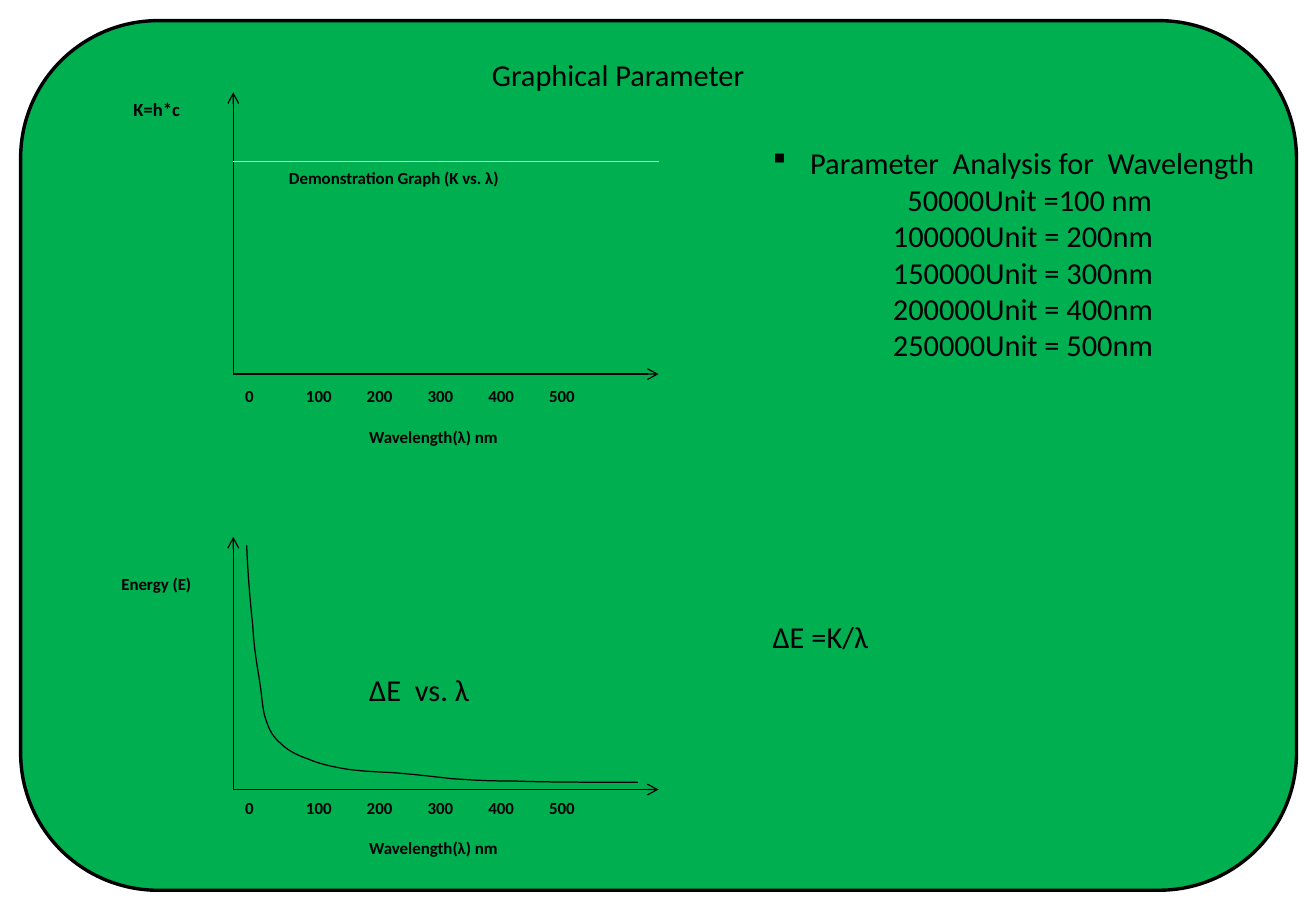
from pptx import Presentation
from pptx.dml.color import RGBColor
from pptx.enum.shapes import MSO_CONNECTOR, MSO_SHAPE
from pptx.oxml.ns import qn
from pptx.util import Inches, Pt
from lxml.etree import SubElement

BLACK = "000000"
TICKS = ["0", "100", "200", "300", "400", "500"]
STOPS = [0.65, 1.27, 1.86, 2.42, 2.88]
# Bezier points of the energy curve: distance right of and above the origin
CURVE = [(0.11, 2.01), (0.12, 1.77), (0.14, 1.54), (0.16, 1.35),
         (0.17, 1.16), (0.2, 1), (0.22, 0.87),
         (0.24, 0.74), (0.24, 0.65), (0.27, 0.57),
         (0.3, 0.48), (0.33, 0.43), (0.39, 0.38),
         (0.45, 0.32), (0.53, 0.28), (0.62, 0.25),
         (0.71, 0.21), (0.81, 0.19), (0.92, 0.17),
         (1.03, 0.15), (1.3, 0.14), (1.3, 0.14),
         (1.44, 0.13), (1.62, 0.11), (1.79, 0.09),
         (1.96, 0.08), (2.05, 0.07), (2.31, 0.07),
         (2.56, 0.06), (2.94, 0.06), (3.33, 0.06)]


def color(code):
    return RGBColor.from_string(code)


def write(slide, box, *lines, size=18, bold=False):
    """Add a text box with one paragraph per line; return the paragraphs."""
    frame = slide.shapes.add_textbox(*map(Inches, box)).text_frame
    frame.word_wrap = True
    paras = []
    for i, line in enumerate(lines):
        para = frame.add_paragraph() if i else frame.paragraphs[0]
        run = para.add_run()
        run.text = line
        run.font.name = "Calibri"
        run.font.size = Pt(size)
        run.font.bold = bold
        run.font.color.rgb = color(BLACK)
        paras.append(para)
    return paras


def indent(para, left, first=0):
    props = para._p.get_or_add_pPr()
    props.set("marL", str(Inches(left)))
    props.set("indent", str(Inches(first)))
    return props


def rule(slide, start, end, code=BLACK, arrow=False):
    line = slide.shapes.add_connector(
        MSO_CONNECTOR.STRAIGHT, *map(Inches, start + end))
    line.line.color.rgb = color(code)
    line.line.width = Pt(0.75)
    if arrow:
        SubElement(line.line._get_or_add_ln(), qn("a:tailEnd"), type="arrow")
    SubElement(line._element.spPr, qn("a:effectLst"))


def panel(slide, box):
    x, y, w, h = map(Inches, box)
    shape = slide.shapes.add_shape(MSO_SHAPE.ROUNDED_RECTANGLE, x, y, w, h)
    shape.adjustments[0] = 0.158
    shape.shadow.inherit = False
    shape.fill.solid()
    shape.fill.fore_color.rgb = color("00B050")
    shape.line.color.rgb = color(BLACK)
    shape.line.width = Pt(2)


def axes(slide, box, gap):
    """Draw both axes, the tick labels and the wavelength caption."""
    x, y, w, h = box
    base = y + h
    rule(slide, (x, base), (x + w, base), arrow=True)
    rule(slide, (x, base), (x, y), arrow=True)
    label = (x, base + gap, w, 0.27)
    ticks, = write(slide, label, "\t".join(TICKS), size=10, bold=True)
    tabs = SubElement(indent(ticks, 0), qn("a:tabLst"))
    for stop in STOPS:
        SubElement(tabs, qn("a:tab"), pos=str(Inches(stop)), algn="l")
    write(slide, (x + 1.02, base + gap + 0.33, 1.4, 0.27),
          "Wavelength(λ) nm", size=10, bold=True)


def constant(slide, box):
    x, y, w, h = box
    axes(slide, box, 0.05)
    write(slide, (x - 0.92, y, 0.7, 0.29), "K=h*c", size=11, bold=True)
    level = y + 0.57
    rule(slide, (x, level), (x + w, level), "C6D9F1")
    write(slide, (x + 0.36, level, 2.2, 0.27),
          "Demonstration Graph (K vs. λ)", size=10, bold=True)


def trace(points, steps=8):
    """Sample a chain of cubic Bezier segments."""
    result = [points[0]]
    for i in range(0, len(points) - 1, 3):
        for n in range(1, steps + 1):
            t = n / steps
            u = 1 - t
            parts = (u ** 3, 3 * u * u * t, 3 * u * t * t, t ** 3)
            result.append(tuple(
                sum(k * p[axis] for k, p in zip(parts, points[i:i + 4]))
                for axis in (0, 1)))
    return result


def energy(slide, box):
    x, y, w, h = box
    axes(slide, box, 0.02)
    write(slide, (x - 1.02, y + 0.25, 0.95, 0.27),
          "Energy (E)", size=10, bold=True)
    dots = [(Inches(x + a), Inches(y + h - b)) for a, b in trace(CURVE)]
    path = slide.shapes.build_freeform(*dots[0])
    path.add_line_segments(dots[1:], close=False)
    curve = path.convert_to_shape()
    curve.shadow.inherit = False
    curve.fill.background()
    curve.line.color.rgb = color(BLACK)
    curve.line.width = Pt(0.75)
    write(slide, (x + 1.02, y + 1.06, 1.3, 0.4), "ΔE  vs. λ")


def notes(slide, box):
    """Write the unit list with its bullet heading, and the formula."""
    x, y, w, h = box
    units = [f"{n * 50000}Unit = {n * 100}nm" for n in range(2, 6)]
    head, first, *rest = write(
        slide, (x, y, w, 2), "Parameter  Analysis for  Wavelength",
        "50000Unit =100 nm", *units)
    props = indent(head, 0.31, -0.31)
    SubElement(props, qn("a:buFont"), typeface="Wingdings")
    SubElement(props, qn("a:buChar"), char="§")
    indent(first, 1.11)
    for para in rest:
        indent(para, 0.99)
    write(slide, (x, y + h - 0.4, 1.3, 0.4), "ΔE =K/λ")


def main():
    deck = Presentation()
    deck.slide_width, deck.slide_height = Inches(10.83), Inches(7.5)
    slide = deck.slides.add_slide(deck.slide_layouts[6])
    # Background and title
    panel(slide, (0.17, 0.17, 10.5, 7.16))
    write(slide, (3.95, 0.41, 2.5, 0.4), "Graphical Parameter")
    # Graphs on the left, analysis on the right
    constant(slide, (1.92, 0.76, 3.5, 2.32))
    energy(slide, (1.92, 4.42, 3.5, 2.08))
    notes(slide, (6.26, 1.14, 4.4, 4.3))
    deck.save("out.pptx")


if __name__ == "__main__":
    main()
